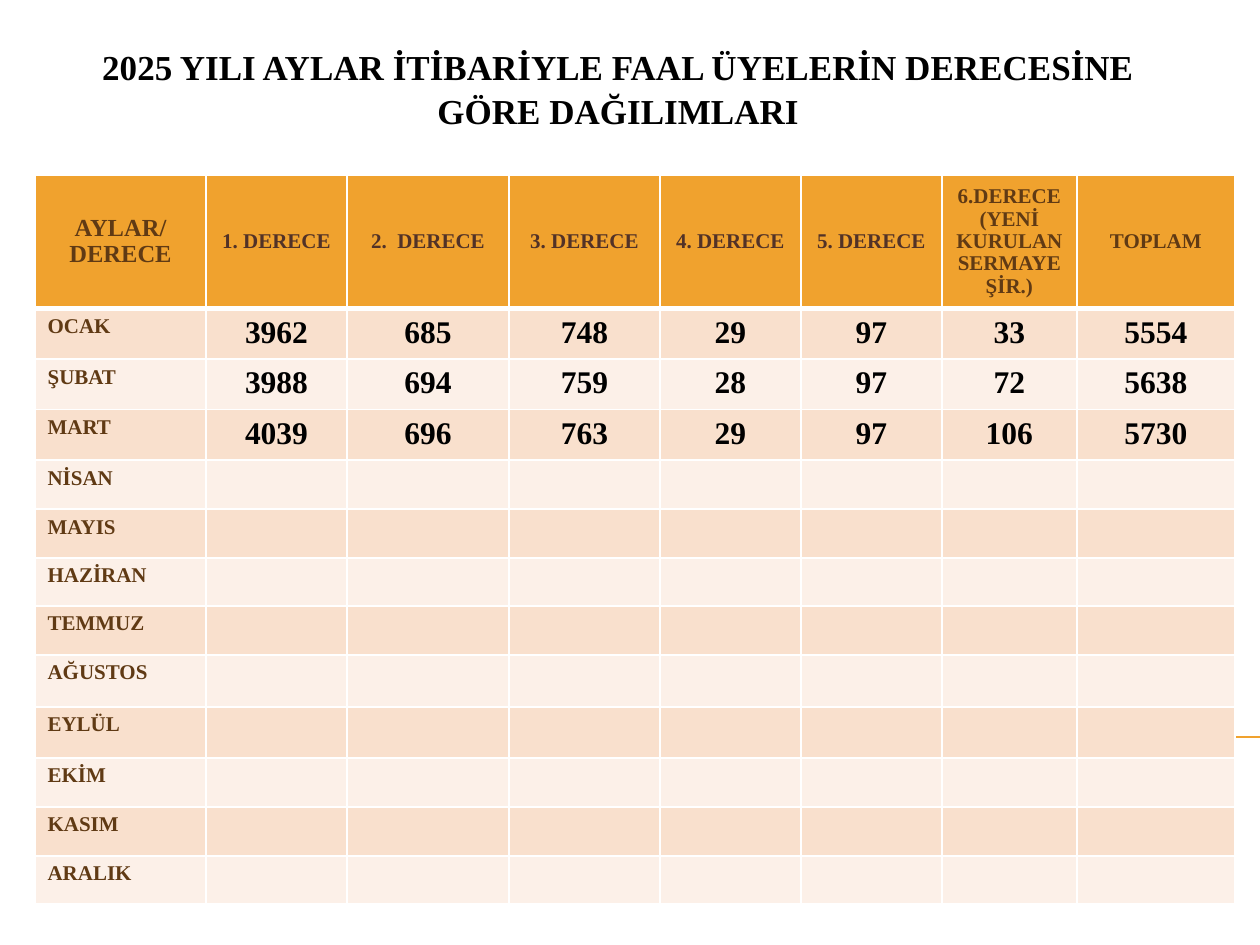
from lxml import etree
from pptx import Presentation, util as u
from pptx.dml.color import RGBColor
from pptx.enum import shapes, text
from pptx.oxml.ns import qn

# Content
TITLE = "2025 YILI AYLAR İTİBARİYLE FAAL ÜYELERİN DERECESİNE GÖRE DAĞILIMLARI"
HEADS = ["AYLAR/ DERECE", "1. DERECE", "2.  DERECE", "3. DERECE", "4. DERECE",
         "5. DERECE", "6.DERECE (YENİ KURULAN SERMAYE ŞİR.)", "TOPLAM"]
MONTHS = ["OCAK", "ŞUBAT", "MART", "NİSAN", "MAYIS", "HAZİRAN", "TEMMUZ",
          "AĞUSTOS", "EYLÜL", "EKİM", "KASIM", "ARALIK"]
COUNTS = {
    "OCAK": [3962, 685, 748, 29, 97, 33, 5554],
    "ŞUBAT": [3988, 694, 759, 28, 97, 72, 5638],
    "MART": [4039, 696, 763, 29, 97, 106, 5730],
}

# Sizes in px
SLIDE = (1260, 945)
TITLE_BOX = (35, 37, 1166, 79)
RULE = (71, 737, 1260, 737)
ORIGIN = (35, 175)
COLS = [171, 141, 162, 151, 141, 141, 135, 158]
ROWS = [133, 49, 49, 48, 49, 49, 48, 49, 52, 51, 49, 49, 48]

THEME = {
    "font": "Times New Roman",
    "black": "000000", "brown": "603A14", "dark": "523227",
    "gold": "F0A22E", "bands": ("F9E0CD", "FCF0E8"), "grid": "FFFFFF",
    "title": 20, "corner": 14, "label": 12, "count": 18,
    "thin": 1, "thick": 3, "rule": 0.75,
}


def px(n):
    return round(n * 914400 / 126)


def rgb(name):
    return RGBColor.from_string(THEME[name])


def write(frame, words, size, color, align, space=1.0):
    frame.text = words
    para = frame.paragraphs[0]
    para.alignment = align
    para.line_spacing = space
    for run in para.runs:
        font = run.font
        font.name, font.bold = THEME["font"], True
        font.size, font.color.rgb = u.Pt(THEME[size]), rgb(color)
    if not words:
        # An empty cell keeps the label size so its row does not grow
        etree.SubElement(para._p, qn("a:endParaRPr"), sz=str(THEME["label"] * 100))


def border(cell, top, bottom):
    props = cell._tc.get_or_add_tcPr()
    widths = {"lnL": "thin", "lnR": "thin", "lnT": top, "lnB": bottom}
    for side, width in widths.items():
        line = etree.SubElement(props, qn("a:" + side), w=str(u.Pt(THEME[width])))
        fill = etree.SubElement(line, qn("a:solidFill"))
        etree.SubElement(fill, qn("a:srgbClr"), val=THEME["grid"])


def style(row, col):
    """Return text size, colour and alignment for a table cell."""
    mid, left = text.PP_ALIGN.CENTER, text.PP_ALIGN.LEFT
    if row == 0:
        size = "corner" if col == 0 else "label"
        return size, "dark" if 1 <= col <= 5 else "brown", mid
    return ("label", "brown", left) if col == 0 else ("count", "black", mid)


def add_rule(slide):
    line = slide.shapes.add_connector(shapes.MSO_CONNECTOR.STRAIGHT, *map(px, RULE))
    line.line.color.rgb = rgb("gold")
    line.line.width = u.Pt(THEME["rule"])
    etree.SubElement(line._element.spPr, qn("a:effectLst"))


def add_title(slide):
    frame = slide.shapes.add_textbox(*map(px, TITLE_BOX)).text_frame
    frame.word_wrap = True
    write(frame, TITLE, "title", "black", text.PP_ALIGN.CENTER, 1.05)


def add_grid(slide):
    data = [HEADS]
    for month in MONTHS:
        data.append([month] + [str(n) for n in COUNTS.get(month, [""] * 7)])
    table = slide.shapes.add_table(
        len(ROWS), len(COLS), *map(px, (*ORIGIN, sum(COLS), sum(ROWS)))).table
    for col, width in zip(table.columns, COLS):
        col.width = px(width)
    for row, height in zip(table.rows, ROWS):
        row.height = px(height)

    for r, items in enumerate(data):
        head = r == 0
        shade = THEME["gold"] if head else THEME["bands"][(r - 1) % 2]
        for c, words in enumerate(items):
            cell = table.cell(r, c)
            border(cell, "thick" if r == 1 else "thin", "thick" if head else "thin")
            cell.fill.solid()
            cell.fill.fore_color.rgb = RGBColor.from_string(shade)
            cell.vertical_anchor = text.MSO_ANCHOR.MIDDLE if head else text.MSO_ANCHOR.TOP
            write(cell.text_frame, words, *style(r, c), 0.96 if head else 1.0)


def main():
    deck = Presentation()
    deck.slide_width, deck.slide_height = map(px, SLIDE)
    slide = deck.slides.add_slide(deck.slide_layouts[6])
    add_rule(slide)
    add_title(slide)
    add_grid(slide)
    deck.save("out.pptx")


if __name__ == "__main__":
    main()
